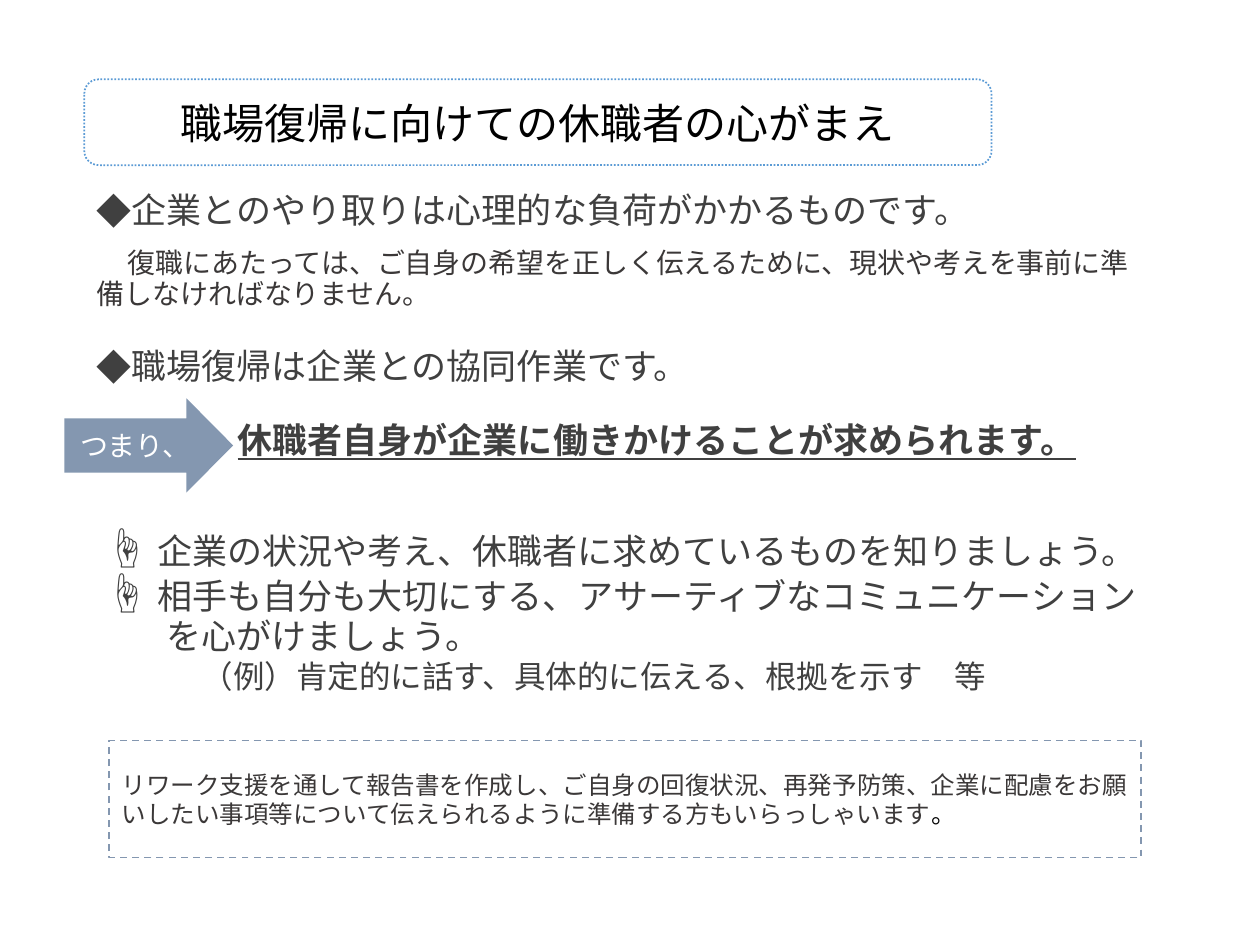
from dataclasses import dataclass

import pptx
import pptx.dml.color
import pptx.enum.dml
import pptx.enum.shapes
import pptx.enum.text
import pptx.oxml
import pptx.oxml.ns
import pptx.util
from pptx.util import Cm

SHAPES = pptx.enum.shapes.MSO_SHAPE
DASHES = pptx.enum.dml.MSO_LINE
ALIGN = pptx.enum.text.PP_ALIGN
ANCHOR = pptx.enum.text.MSO_ANCHOR


@dataclass(frozen=True)
class Theme:
    font: str = "Noto Sans CJK JP"
    black: str = "000000"
    white: str = "FFFFFF"
    body: str = "404040"
    detail: str = "3B3838"
    accent: str = "8497B0"
    frame: str = "5B9BD5"
    title_size: int = 24
    main_size: int = 20
    example_size: int = 18
    detail_size: int = 16
    note_size: int = 14
    line_ratio: float = 1.115


THEME = Theme()


def rgb(value):
    return pptx.dml.color.RGBColor.from_string(value)


def add_span(para, text, size=THEME.main_size, color=THEME.body, bold=False, underline=False):
    span = para.add_run()
    span.text = text
    font = span.font
    font.size = pptx.util.Pt(size)
    font.name = THEME.font
    font.color.rgb = rgb(color)
    font.bold = bold
    font.underline = underline
    properties = span._r.get_or_add_rPr()
    for tag in ("a:ea", "a:sym"):
        child = pptx.oxml.parse_xml(f'<{tag} {pptx.oxml.ns.nsdecls("a")} typeface="{THEME.font}"/>')
        properties.append(child)


def add_bullet(properties, symbol):
    for tag, name, value in (("a:buFont", "typeface", THEME.font), ("a:buChar", "char", symbol)):
        child = pptx.oxml.parse_xml(f'<{tag} {pptx.oxml.ns.nsdecls("a")} {name}="{value}"/>')
        properties.append(child)


def add_text(frame, text, size=THEME.main_size, line=None, before=0, margin=0, indent=0,
             align=ALIGN.LEFT, bullet=None, marker=None, **format):
    first = frame.paragraphs[0]
    para = frame.add_paragraph() if first.runs else first
    para.alignment = align
    para.space_before = pptx.util.Pt(before)
    if line:
        para.line_spacing = pptx.util.Pt(round(size * line, 1))
    properties = para._p.get_or_add_pPr()
    properties.set("marL", str(Cm(margin)))
    properties.set("indent", str(Cm(indent)))
    if bullet:
        add_bullet(properties, bullet)
    if marker:
        add_span(para, marker, size=THEME.title_size)
    add_span(para, text, size=size, **format)
    return para


def add_panel(page, kind, left, top, width, height, fill=None, line=None, dash=None):
    panel = page.shapes.add_shape(kind, Cm(left), Cm(top), Cm(width), Cm(height))
    panel.shadow.inherit = False
    if fill:
        panel.fill.solid()
        panel.fill.fore_color.rgb = rgb(fill)
    else:
        panel.fill.background()
    if line:
        panel.line.color.rgb = rgb(line)
        panel.line.width = pptx.util.Pt(1)
        panel.line.dash_style = dash
    else:
        panel.line.fill.background()
    panel.text_frame.word_wrap = True
    panel.text_frame.vertical_anchor = ANCHOR.MIDDLE
    return panel


def add_title(page):
    panel = add_panel(page, SHAPES.ROUNDED_RECTANGLE, 1.7, 1.6, 18.29, 1.73,
                      fill=THEME.white, line=THEME.frame, dash=DASHES.ROUND_DOT)
    add_text(panel.text_frame, "職場復帰に向けての休職者の心がまえ",
             size=THEME.title_size, color=THEME.black, align=ALIGN.CENTER)


def add_body(page):
    box = page.shapes.add_textbox(Cm(1.7), Cm(3.73), Cm(21.79), Cm(11.2))
    frame = box.text_frame
    frame.word_wrap = True
    ratio = THEME.line_ratio
    point = dict(line=ratio, margin=0.7, indent=-0.7, bullet="◆")
    advice = dict(line=ratio, margin=0.18, marker="☝ ")
    add_text(frame, "企業とのやり取りは心理的な負荷がかかるものです。", **point)
    add_text(frame, "復職にあたっては、ご自身の希望を正しく伝えるために、現状や考えを事前に準備しなければなりません。",
             size=THEME.detail_size, color=THEME.detail, line=ratio, before=10.2, indent=0.63)
    add_text(frame, "職場復帰は企業との協同作業です。", before=21.3, **point)
    add_text(frame, "休職者自身が企業に働きかけることが求められます。",
             line=ratio, before=20, margin=2.84, bold=True, underline=True)
    add_text(frame, "企業の状況や考え、休職者に求めているものを知りましょう。", before=41.7, **advice)
    add_text(frame, "相手も自分も大切にする、アサーティブなコミュニケーション", before=3.4, **advice)
    add_text(frame, "を心がけましょう。", line=ratio, margin=1.41)
    add_text(frame, "（例）肯定的に話す、具体的に伝える、根拠を示す　等",
             size=THEME.example_size, line=ratio, before=1.4, margin=2.12)


def add_arrow(page):
    arrow = add_panel(page, SHAPES.RIGHT_ARROW, 1.3, 8.03, 3.4, 1.9, fill=THEME.accent)
    arrow.adjustments[0] = 0.575
    arrow.adjustments[1] = 0.495
    add_text(arrow.text_frame, "つまり、", size=THEME.detail_size,
             color=THEME.white, align=ALIGN.CENTER)


def add_note(page):
    panel = add_panel(page, SHAPES.RECTANGLE, 2.2, 14.93, 20.81, 2.36,
                      line=THEME.accent, dash=DASHES.DASH)
    para = add_text(
        panel.text_frame,
        "リワーク支援を通して報告書を作成し、ご自身の回復状況、再発予防策、企業に配慮をお願いしたい事項等について"
        "伝えられるように準備する方もいらっしゃいます",
        size=THEME.note_size, color=THEME.detail, line=1.18)
    add_span(para, "。", size=THEME.note_size, color=THEME.black)


def main():
    deck = pptx.Presentation()
    deck.slide_width = Cm(25.4)
    deck.slide_height = Cm(19.05)
    page = deck.slides.add_slide(deck.slide_layouts[6])
    add_body(page)
    add_arrow(page)
    add_title(page)
    add_note(page)
    deck.save("out.pptx")


if __name__ == "__main__":
    main()
